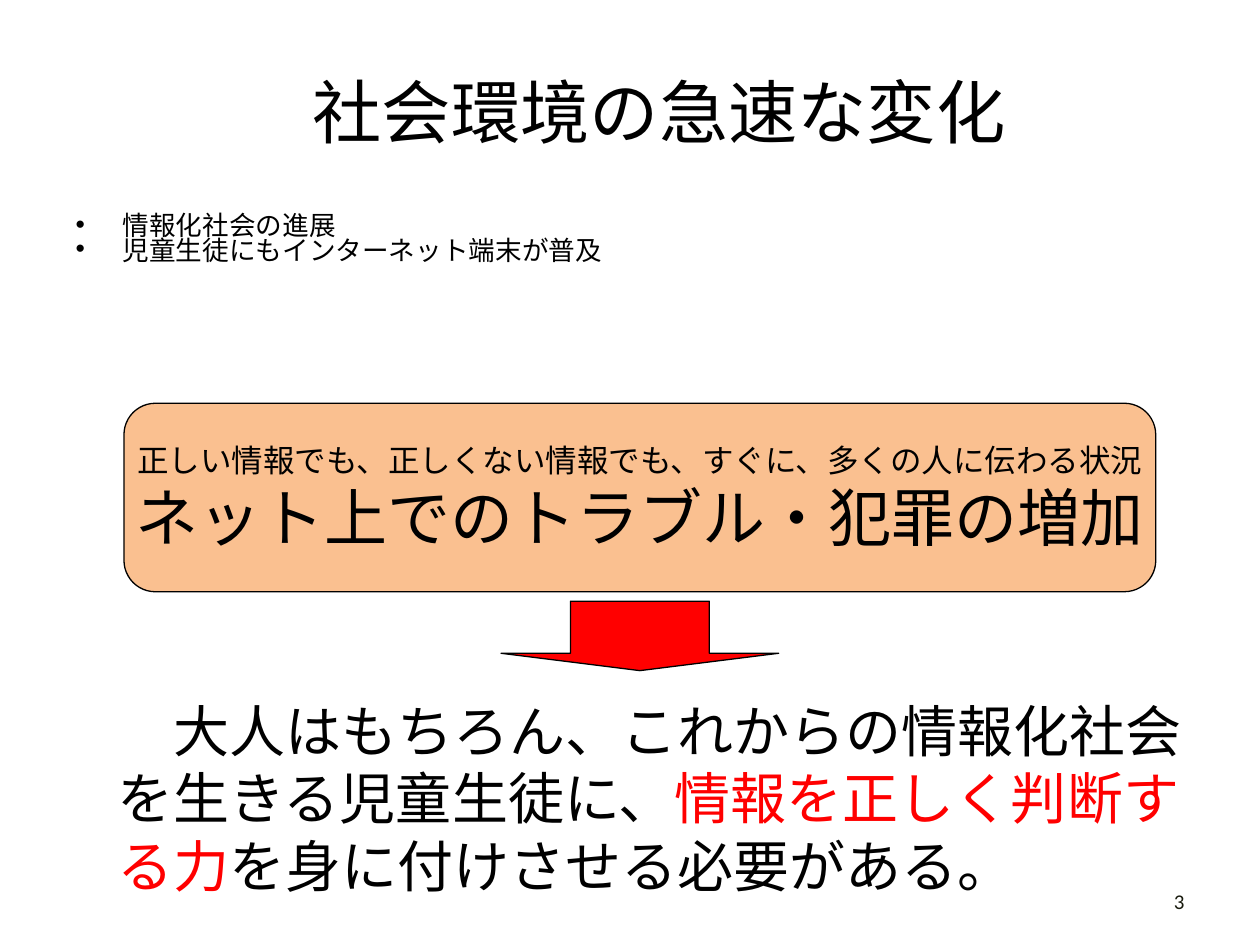
from lxml import etree
from pptx import Presentation
from pptx.dml.color import RGBColor
from pptx.enum.shapes import MSO_SHAPE
from pptx.enum.text import MSO_ANCHOR, MSO_AUTO_SIZE, PP_ALIGN
from pptx.oxml.ns import qn
from pptx.util import Cm, Pt

ROUND, ARROW = MSO_SHAPE.ROUNDED_RECTANGLE, MSO_SHAPE.DOWN_ARROW
MID, TOP = MSO_ANCHOR.MIDDLE, MSO_ANCHOR.TOP
LEFT, MIDST, RIGHT = PP_ALIGN.LEFT, PP_ALIGN.CENTER, PP_ALIGN.RIGHT
FIXED = MSO_AUTO_SIZE.NONE
BLACK, RED, PEACH, DARK = "000000", "FF0000", "FAC090", "191B0E"
SANS, SOFT = "Calibri", "Quicksand"


def color(code):
    return RGBColor.from_string(code)


def place(shape, box):
    shape.left, shape.top, shape.width, shape.height = map(Cm, box)


def frame(shape, anchor, wrap=True):
    text = shape.text_frame
    text.auto_size = FIXED
    text.word_wrap = wrap
    text.vertical_anchor = anchor
    return text


def add_run(para, words, size, font, code=BLACK):
    run = para.add_run()
    run.text = words
    run.font.size = Pt(size)
    run.font.name = font
    run.font.color.rgb = color(code)


def add_para(text, first, align=LEFT):
    para = text.paragraphs[0] if first else text.add_paragraph()
    para.alignment = align
    return para


def indent(para, margin, first):
    props = para._p.get_or_add_pPr()
    props.set("marL", str(Cm(margin)))
    props.set("indent", str(Cm(first)))
    return props


def add_block(slide, kind, box, fill):
    block = slide.shapes.add_shape(kind, *map(Cm, box))
    block.shadow.inherit = False
    block.fill.solid()
    block.fill.fore_color.rgb = color(fill)
    block.line.color.rgb = color(BLACK)
    block.line.width = Pt(0.75)
    return block


def add_title(slide, box, words):
    title = slide.shapes.title
    place(title, box)
    para = add_para(frame(title, MID), True, MIDST)
    add_run(para, words, 39.6, SANS)


def add_list(slide, box, items):
    body = slide.placeholders[1]
    place(body, box)
    text = frame(body, TOP)
    for i, item in enumerate(items):
        para = add_para(text, i == 0)
        para.line_spacing = 0.6
        para.space_before = Pt(3)
        props = indent(para, 0.95, -0.95)
        etree.SubElement(props, qn("a:buChar")).set("char", "•")
        add_run(para, item, 15.2, SANS)


def add_panel(slide, box, lines):
    """Rounded panel with an arrow centred below it."""
    left, top, width, height = box
    panel = add_block(slide, ROUND, box, PEACH)
    text = frame(panel, MID, wrap=False)
    for i, (words, size) in enumerate(lines):
        add_run(add_para(text, i == 0, MIDST), words, size, SOFT)
    span = 5.6
    spot = (left + (width - span) / 2, top + height + 0.19, span, 1.4)
    arrow = add_block(slide, ARROW, spot, RED)
    arrow.adjustments[0] = 0.5
    arrow.adjustments[1] = 0.25


def add_text(slide, box, anchor, align, runs, size, font, first=0):
    area = slide.shapes.add_textbox(*map(Cm, box))
    para = add_para(frame(area, anchor), True, align)
    indent(para, 0, first)
    for words, code in runs:
        add_run(para, words, size, font, code)


def main():
    deck = Presentation()
    deck.slide_width, deck.slide_height = Cm(25.4), Cm(19.05)
    slide = deck.slides.add_slide(deck.slide_layouts[1])
    add_title(slide, (5.26, 1.32, 16.05, 1.83), "社会環境の急速な変化")
    add_list(slide, (1.27, 4.32, 24.13, 3), [
        "情報化社会の進展",
        "児童生徒にもインターネット端末が普及",
    ])
    add_panel(slide, (2.5, 8.13, 20.8, 3.8), [
        ("正しい情報でも、正しくない情報でも、すぐに、多くの人に伝わる状況", 18),
        ("ネット上でのトラブル・犯罪の増加", 36),
    ])
    add_text(slide, (2.11, 13.92, 22.2, 4.37), TOP, LEFT, [
        ("大人はもちろん、これからの情報化社会を生きる児童生徒に、", BLACK),
        ("情報を正しく判断する力", RED),
        ("を身に付けさせる必要がある。", BLACK),
    ], 32, SOFT, first=1.13)
    add_text(slide, (18.21, 17.65, 5.92, 1.02), MID, RIGHT,
             [("3", DARK)], 12, SANS)
    deck.save("out.pptx")


if __name__ == "__main__":
    main()
